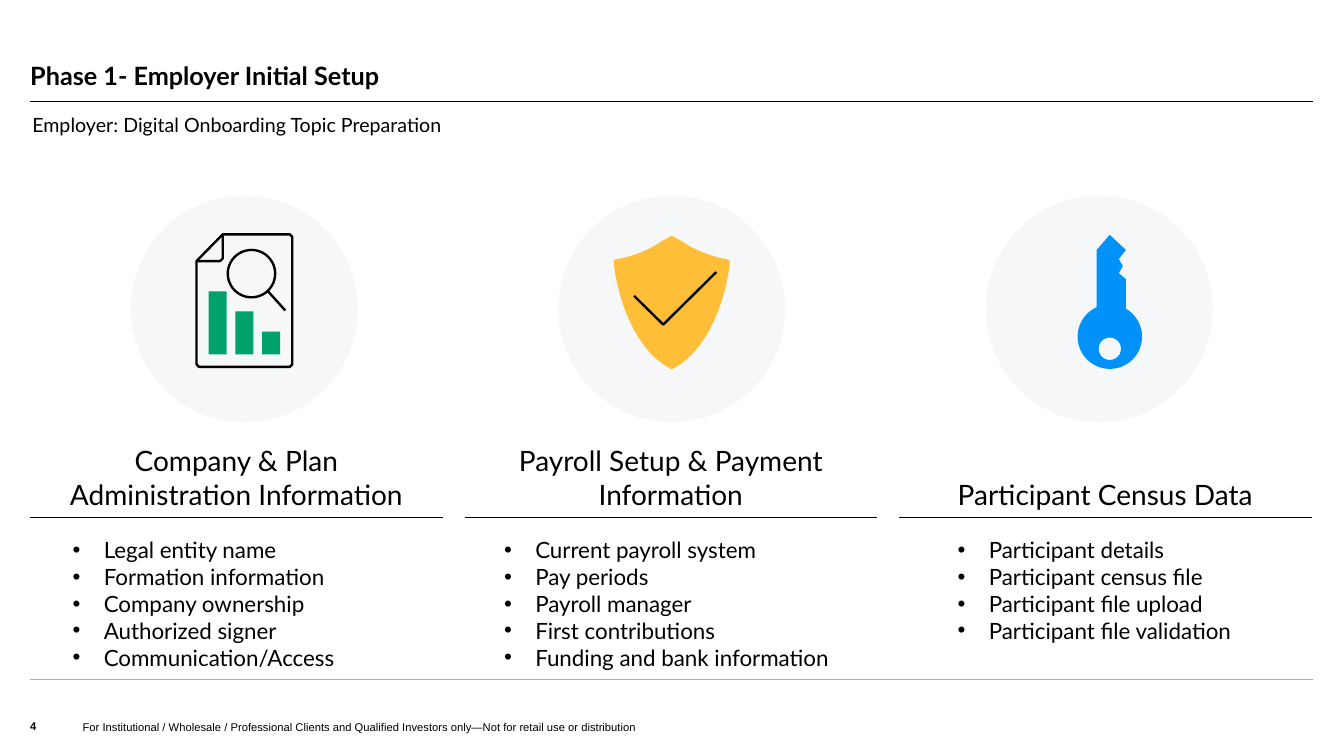
from lxml import etree
from pptx import Presentation
from pptx import util as u
from pptx.dml.color import RGBColor
from pptx.enum import shapes, text
from pptx.oxml import ns

BLACK, GREY, PALE = "000000", "ABADAF", "F5F7F8"
GREEN, YELLOW, BLUE = "00A16D", "FFBE37", "0092F9"
COLUMNS, ROWS = 160, 90
MARGIN, FULL_WIDTH = 3.6, 152.76
CIRCLE_SIZE, CIRCLE_LEFT, CIRCLE_TOP, CIRCLE_STEP = 27, 15.6, 23.28, 50.88
SECTION_STEP, SECTION_WIDTH = 51.72, 49.1

SECTIONS = [
    ("Company & Plan Administration Information", 2, 8.64,
     ["Legal entity name", "Formation information", "Company ownership",
      "Authorized signer", "Communication/Access"]),
    ("Payroll Setup & Payment Information", 4, 60,
     ["Current payroll system", "Pay periods", "Payroll manager",
      "First contributions", "Funding and bank information"]),
    ("Participant Census Data", 3, 114,
     ["Participant details", "Participant census file",
      "Participant file upload", "Participant file validation"]),
]


def color(value):
    return RGBColor.from_string(value)


def bezier(start, first, second, end, steps=16):
    points = []
    for step in range(steps + 1):
        t = step / steps
        weights = ((1 - t) ** 3, 3 * t * (1 - t) ** 2, 3 * t * t * (1 - t), t ** 3)
        points.append(tuple(
            sum(weight * point[axis] for weight, point in zip(weights, (start, first, second, end)))
            for axis in (0, 1)))
    return points


class Deck:
    font = "Lato"
    thin, stroke = 0.5, 1.7

    def __init__(self, presentation):
        self.unit_x = presentation.slide_width / COLUMNS
        self.unit_y = presentation.slide_height / ROWS
        self.slide = presentation.slides.add_slide(presentation.slide_layouts[4])
        self.origin = (0, 0)

    def point(self, x, y):
        return (round((self.origin[0] + x) * self.unit_x),
                round((self.origin[1] + y) * self.unit_y))

    def box(self, left, top, width, height):
        return (*self.point(left, top), round(width * self.unit_x), round(height * self.unit_y))

    def paint(self, shape, fill=None, line=None):
        shape.shadow.inherit = False
        if fill:
            shape.fill.solid()
            shape.fill.fore_color.rgb = color(fill)
        else:
            shape.fill.background()
        if line:
            shape.line.color.rgb = color(line)
            shape.line.width = u.Pt(self.stroke)
        else:
            shape.line.fill.background()

    def preset(self, kind, box, fill=None, line=None):
        shape = self.slide.shapes.add_shape(kind, *self.box(*box))
        self.paint(shape, fill, line)

    def outline(self, points, fill=None, line=None, close=True):
        first, *others = [self.point(*point) for point in points]
        builder = self.slide.shapes.build_freeform(*first)
        builder.add_line_segments(others, close=close)
        self.paint(builder.convert_to_shape(), fill, line)

    def rule(self, start, end, line=BLACK, width=thin):
        connector = self.slide.shapes.add_connector(
            shapes.MSO_CONNECTOR.STRAIGHT, *self.point(*start), *self.point(*end))
        connector.line.color.rgb = color(line)
        connector.line.width = u.Pt(width)
        etree.SubElement(connector._element.spPr, ns.qn("a:effectLst"))

    def bullet(self, paragraph):
        properties = paragraph._p.get_or_add_pPr()
        properties.set("marL", str(u.Inches(0.31)))
        properties.set("indent", str(-u.Inches(0.31)))
        etree.SubElement(properties, ns.qn("a:buFont")).set("typeface", "Arial")
        etree.SubElement(properties, ns.qn("a:buChar")).set("char", "•")

    def words(self, lines, box, size, placeholder=None, font=font, bold=False, bullets=False,
              align=text.PP_ALIGN.LEFT, anchor=text.MSO_ANCHOR.BOTTOM, spacing=1.0):
        if placeholder is None:
            shape = self.slide.shapes.add_textbox(*self.box(*box))
        else:
            shape = self.slide.placeholders[placeholder]
            shape.left, shape.top, shape.width, shape.height = self.box(*box)
        frame = shape.text_frame
        frame.text = "\n".join(lines)
        frame.word_wrap = True
        frame.auto_size = text.MSO_AUTO_SIZE.NONE
        frame.vertical_anchor = anchor
        frame.margin_left = frame.margin_right = frame.margin_top = frame.margin_bottom = 0
        for paragraph in frame.paragraphs:
            paragraph.alignment = align
            paragraph.line_spacing = spacing
            paragraph.space_before = paragraph.space_after = u.Pt(0)
            if bullets:
                self.bullet(paragraph)
            for run in paragraph.runs:
                run.font.name = font
                run.font.size = u.Pt(size)
                run.font.bold = bold
                run.font.color.rgb = color(BLACK)


def draw_report(deck):
    oval = shapes.MSO_SHAPE.OVAL
    for index, height in enumerate((7.5, 5.1, 2.7)):
        deck.preset(shapes.MSO_SHAPE.RECTANGLE,
                    (-4.26 + 3.18 * index, 5.4 - height, 2.16, height), GREEN)
    deck.outline([(-2.58, -8.88), (5.4, -8.88), (5.7, -8.58), (5.7, 6.6), (5.4, 6.9),
                  (-5.4, 6.9), (-5.7, 6.6), (-5.7, -5.7)], line=BLACK)
    deck.outline([(-5.7, -5.7), (-2.9, -5.7), (-2.58, -6), (-2.58, -8.88)],
                 line=BLACK, close=False)
    deck.preset(oval, (-1.98, -7.02, 5.64, 5.64), line=BLACK)
    deck.rule((2.7, -2.22), (4.86, 0.18), width=deck.stroke)


def draw_shield(deck):
    left = bezier((0, 7.2), (-5.4, 4.5), (-6.9, -4), (-6.9, -5.82))
    left += bezier((-6.42, -5.94), (-4.5, -6.3), (-2.7, -7.02), (-1.14, -8.1))
    right = [(-x, y) for x, y in reversed(left[1:])]
    deck.outline(left + [(0, -8.7)] + right, YELLOW)
    deck.outline([(-4.5, -1.56), (-1.02, 1.86), (5.28, -4.38)], line=BLACK, close=False)


def draw_key(deck):
    oval = shapes.MSO_SHAPE.OVAL
    deck.preset(oval, (-2.58, -0.54, 7.68, 7.68), BLUE)
    deck.outline([(-0.3, -7.02), (1.26, -8.82), (3.18, -7.02), (2.34, -5.94), (2.82, -5.1),
                  (2.34, -4.26), (3.18, -3.54), (3.18, 0.78), (-0.3, 0.78)], BLUE)
    deck.preset(oval, (-0.06, 3.42, 2.64, 2.64), PALE)


def main():
    presentation = Presentation()
    presentation.slide_width = u.Inches(13.33)
    presentation.slide_height = u.Inches(7.5)
    deck = Deck(presentation)
    top = text.MSO_ANCHOR.TOP

    deck.words(["Phase 1- Employer Initial Setup"], (MARGIN, 3.6, FULL_WIDTH, 7.2), 18,
               placeholder=0, bold=True, spacing=0.9)
    deck.words(["Employer: Digital Onboarding Topic Preparation"],
               (3.84, 13.44, 150, 4.8), 14, placeholder=1, anchor=top)
    for row, line in ((12.12, BLACK), (80.88, GREY)):
        deck.rule((MARGIN, row), (MARGIN + FULL_WIDTH, row), line)

    icons = (draw_report, draw_shield, draw_key)
    for index, (heading, placeholder, list_left, items) in enumerate(SECTIONS):
        left = MARGIN + SECTION_STEP * index
        deck.words([heading], (left + 1.68, 51.84, 45.72, 9), 20, align=text.PP_ALIGN.CENTER)
        deck.rule((left, 61.56), (left + SECTION_WIDTH, 61.56))
        deck.words(items, (list_left, 63.84, 43.8, 16.08), 16, placeholder=placeholder,
                   bullets=True, anchor=top)
        circle_left = CIRCLE_LEFT + CIRCLE_STEP * index
        deck.preset(shapes.MSO_SHAPE.OVAL,
                    (circle_left, CIRCLE_TOP, CIRCLE_SIZE, CIRCLE_SIZE), PALE)
        deck.origin = (circle_left + CIRCLE_SIZE / 2, CIRCLE_TOP + CIRCLE_SIZE / 2)
        icons[index](deck)
        deck.origin = (0, 0)

    deck.words(["4"], (MARGIN, 84.72, 4.56, 2.52), 8, font="Arial", bold=True)
    deck.words(["For Institutional / Wholesale / Professional Clients and Qualified Investors "
                "only—Not for retail use or distribution"],
               (9.84, 84.72, 127.56, 2.6), 8, font="Arial")
    presentation.save("out.pptx")


if __name__ == "__main__":
    main()
